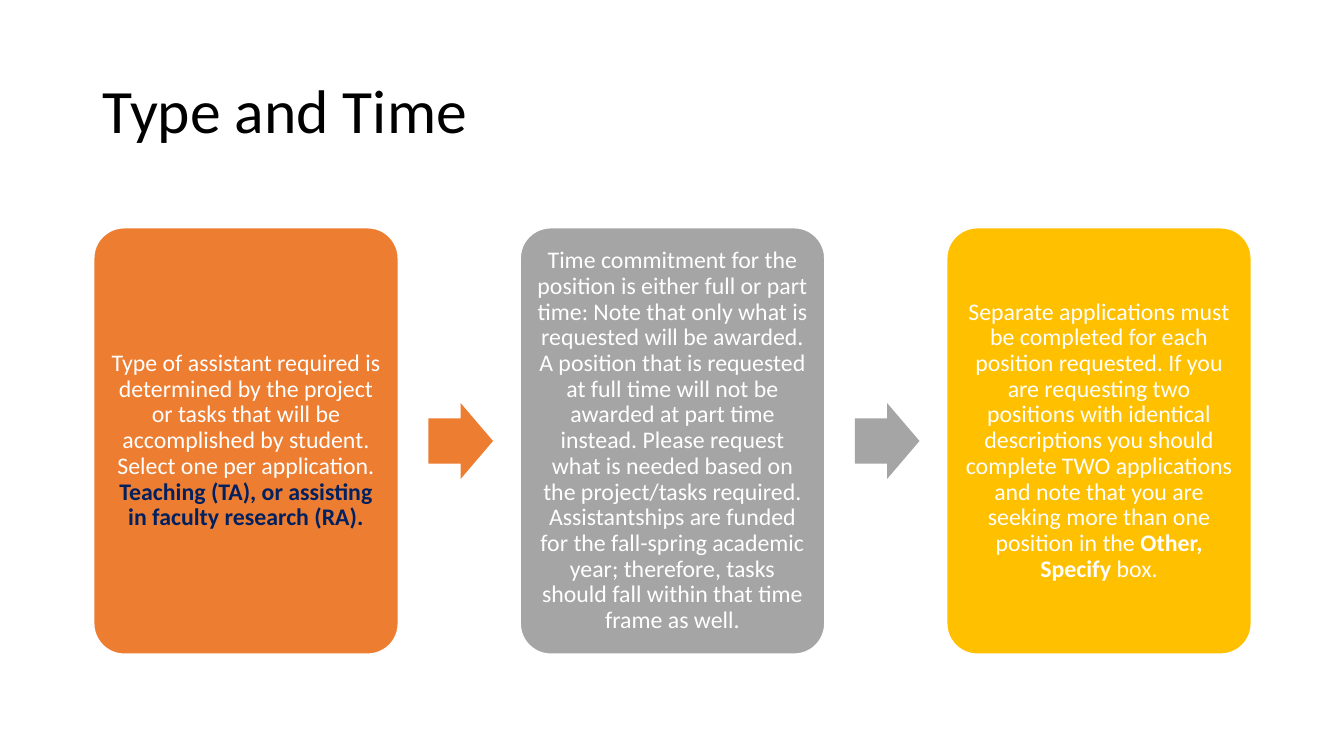
"""Build the Type and Time slide: three steps joined by arrows."""
import pptx
import pptx.util
import pptx.dml.color
import pptx.enum.shapes
import pptx.enum.text

Inches, Pt = pptx.util.Inches, pptx.util.Pt
RGB = pptx.dml.color.RGBColor.from_string
SHAPE = pptx.enum.shapes.MSO_SHAPE
ALIGN = pptx.enum.text.PP_ALIGN

TITLE = "Type and Time"
STEPS = [
    ("orange", [
        ("Type of assistant required is determined by the project or tasks that will be "
         "accomplished by student. Select one per application. ", "white", False),
        ("Teaching (TA), or assisting in faculty research (RA).", "navy", True),
    ]),
    ("grey", [
        ("Time commitment for the position is either full or part time: Note that only what "
         "is requested will be awarded. A position that is requested at full time will not be "
         "awarded at part time instead. Please request what is needed based on the "
         "project/tasks required. Assistantships are funded for the fall-spring academic "
         "year; therefore, tasks should fall within that time frame as well.", "white", False),
    ]),
    ("gold", [
        ("Separate applications must be completed for each position requested. If you are "
         "requesting two positions with identical descriptions you should complete TWO "
         "applications and note that you are seeking more than one position in the ",
         "white", False),
        ("Other, Specify", "white", True),
        (" box.", "white", False),
    ]),
]
THEME = {
    "font": "Calibri", "title": 44, "body": 17,
    "black": "000000", "white": "FFFFFF", "navy": "002060",
    "orange": "ED7D31", "grey": "A5A5A5", "gold": "FFC000",
}
LEFT, TOP, STEP = 0.93, 2.26, 4.23
CARD_W, CARD_H = 3.02, 4.23
ARROW_W, ARROW_H, ARROW_DX = 0.64, 0.75, 3.32


def add_block(s, kind, box, adjustments, color):
    """Add a filled preset shape without shadow or outline."""
    sp = s.shapes.add_shape(kind, *map(Inches, box))
    for i, value in enumerate(adjustments):
        sp.adjustments[i] = value
    sp.shadow.inherit = False
    sp.fill.solid()
    sp.fill.fore_color.rgb = RGB(THEME[color])
    sp.line.fill.background()
    return sp


def write(tf, runs, size, align, inset_x, inset_y):
    """Fill a text frame with one paragraph of styled runs."""
    frame = {
        "word_wrap": True, "auto_size": pptx.enum.text.MSO_AUTO_SIZE.NONE,
        "vertical_anchor": pptx.enum.text.MSO_ANCHOR.MIDDLE,
        "margin_left": Inches(inset_x), "margin_right": Inches(inset_x),
        "margin_top": Inches(inset_y), "margin_bottom": Inches(inset_y),
    }
    for name, value in frame.items():
        setattr(tf, name, value)
    p = tf.paragraphs[0]
    p.alignment, p.line_spacing = align, 0.9
    for text, color, bold in runs:
        r = p.add_run()
        r.text = text
        for name, value in {"name": THEME["font"], "size": Pt(size), "bold": bold}.items():
            setattr(r.font, name, value)
        r.font.color.rgb = RGB(THEME[color])


def main():
    """Lay out the title, cards and arrows, then save."""
    prs = pptx.Presentation()
    prs.slide_width, prs.slide_height = Inches(13.33), Inches(7.5)
    s = prs.slides.add_slide(prs.slide_layouts[5])

    title = s.shapes.title
    for name, value in {"left": 0.92, "top": 0.4, "width": 11.5, "height": 1.45}.items():
        setattr(title, name, Inches(value))
    write(title.text_frame, [(TITLE, "black", False)], THEME["title"], ALIGN.LEFT, 0.1, 0.05)

    for i, (color, runs) in enumerate(STEPS):
        x = LEFT + i * STEP
        card = add_block(s, SHAPE.ROUNDED_RECTANGLE, (x, TOP, CARD_W, CARD_H), [0.1], color)
        card.line.color.rgb = RGB(THEME["white"])
        card.line.width = Pt(1)
        write(card.text_frame, runs, THEME["body"], ALIGN.CENTER, 0.07, 0.07)
        if i < len(STEPS) - 1:
            y = TOP + (CARD_H - ARROW_H) / 2
            add_block(s, SHAPE.RIGHT_ARROW, (x + ARROW_DX, y, ARROW_W, ARROW_H),
                      [0.6, 0.5], color)

    prs.save("out.pptx")


if __name__ == "__main__":
    main()
